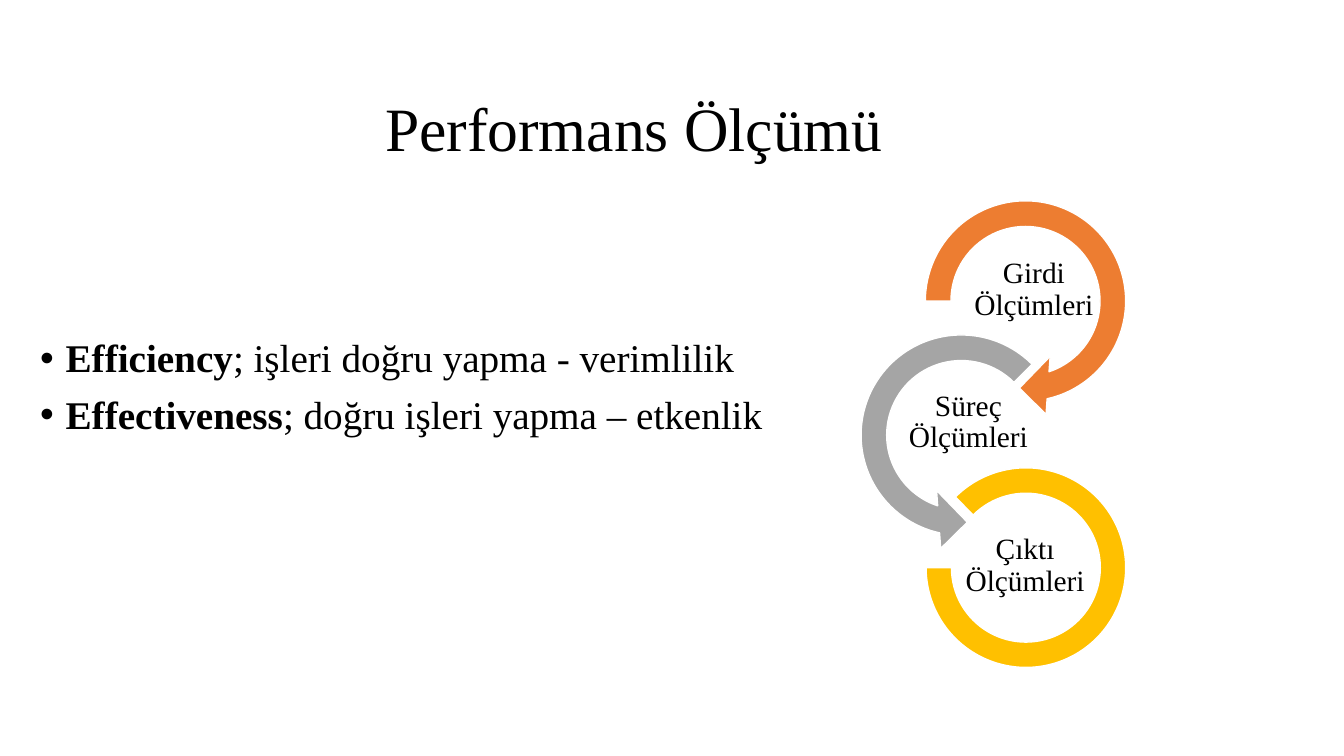
"""Build the performance measurement slide with its chain of three measurement stages."""
from dataclasses import dataclass
from typing import Any

from pptx import Presentation
from pptx.dml.color import RGBColor
from pptx.enum.shapes import MSO_SHAPE
from pptx.enum.text import MSO_ANCHOR, MSO_AUTO_SIZE, PP_ALIGN
from pptx.util import Cm, Pt

CLOCKWISE = MSO_SHAPE.CIRCULAR_ARROW
COUNTERCLOCKWISE = MSO_SHAPE.LEFT_CIRCULAR_ARROW
ARC = MSO_SHAPE.BLOCK_ARC
MIDDLE, TOP = MSO_ANCHOR.MIDDLE, MSO_ANCHOR.TOP
NO_FIT = MSO_AUTO_SIZE.NONE
LEFT, CENTER = PP_ALIGN.LEFT, PP_ALIGN.CENTER

FONT = "Times New Roman"
BLACK, WHITE = "000000", "FFFFFF"
LABEL_WIDTH, LABEL_HEIGHT = 3.25, 1.63
INSET = Cm(0.03)

TITLE_FRAME = {"word_wrap": True, "auto_size": NO_FIT, "vertical_anchor": MIDDLE}
BODY_FRAME = TITLE_FRAME | {"vertical_anchor": TOP}
LABEL_FRAME = TITLE_FRAME | {
    "margin_left": INSET, "margin_right": INSET,
    "margin_top": INSET, "margin_bottom": INSET,
}
TITLE_PARAGRAPH = {"alignment": LEFT, "line_spacing": 0.9}
BODY_PARAGRAPH = TITLE_PARAGRAPH | {"space_before": Pt(10)}
LABEL_PARAGRAPH = {"alignment": CENTER, "line_spacing": 0.9, "space_after": Pt(7.35)}


@dataclass(frozen=True)
class Stage:
    """A measurement stage: its ring and the label inside it."""

    label: str
    ring: MSO_SHAPE
    color: str
    left: float
    top: float
    size: float
    label_left: float
    label_top: float
    adjustments: tuple[float, ...]


@dataclass(frozen=True)
class Definition:
    """A term and its explanation."""

    term: str
    meaning: str


STAGES = (
    Stage("Girdi Ölçümleri", CLOCKWISE, "ED7D31", 22.91, 4.65, 5.87,
          24.43, 6.5, (0.11, 11.42, 45, 108, 0.125)),
    Stage("Süreç Ölçümleri", COUNTERCLOCKWISE, "A5A5A5", 21.29, 8.03, 5.87,
          22.78, 9.83, (0.11, 11.42, 63, 189, 0.125)),
    Stage("Çıktı Ölçümleri", ARC, "FFC000", 23.34, 11.79, 5.03,
          24.21, 13.44, (135, 108, 0.127)),
)
DEFINITIONS = (
    Definition("Efficiency", "; işleri doğru yapma - verimlilik"),
    Definition("Effectiveness", "; doğru işleri yapma – etkenlik"),
)


def color(hex_value: str) -> RGBColor:
    """Turn a hex string into a colour."""
    return RGBColor.from_string(hex_value)


def apply_format(target: Any, values: dict[str, Any]) -> None:
    """Set every named format value on the target."""
    for name, value in values.items():
        setattr(target, name, value)


def place(target: Any, left: float, top: float, width: float, height: float) -> None:
    """Move and size a placeholder, in centimetres."""
    apply_format(target, {"left": Cm(left), "top": Cm(top),
                          "width": Cm(width), "height": Cm(height)})


def write(paragraph: Any, text: str, size: float, bold: bool = False) -> None:
    """Append a formatted run to a paragraph."""
    run = paragraph.add_run()
    run.text = text
    apply_format(run.font, {"name": FONT, "size": Pt(size), "bold": bold})
    run.font.color.rgb = color(BLACK)


def fill_title(title: Any) -> None:
    """Place and write the title."""
    place(title, 9.45, 1.98, 13.34, 2.69)
    apply_format(title.text_frame, TITLE_FRAME)
    heading = title.text_frame.paragraphs[0]
    apply_format(heading, TITLE_PARAGRAPH)
    write(heading, "Performans Ölçümü", 44)


def fill_definitions(body: Any) -> None:
    """Place the body and write one bullet per definition."""
    place(body, 0.76, 8.41, 19, 4.45)
    frame = body.text_frame
    apply_format(frame, BODY_FRAME)
    for index, definition in enumerate(DEFINITIONS):
        bullet = frame.add_paragraph() if index else frame.paragraphs[0]
        apply_format(bullet, BODY_PARAGRAPH)
        properties = bullet._p.get_or_add_pPr()
        properties.set("marL", str(Cm(0.64)))
        properties.set("indent", str(-Cm(0.64)))
        write(bullet, definition.term, 28, bold=True)
        write(bullet, definition.meaning, 28)


def draw_stage(shapes: Any, stage: Stage) -> None:
    """Draw the ring of a stage and its label."""
    ring = shapes.add_shape(stage.ring, Cm(stage.left), Cm(stage.top),
                            Cm(stage.size), Cm(stage.size))
    for index, value in enumerate(stage.adjustments):
        ring.adjustments[index] = value
    ring.shadow.inherit = False
    ring.fill.solid()
    ring.fill.fore_color.rgb = color(stage.color)
    ring.line.color.rgb = color(WHITE)
    ring.line.width = Pt(1)

    label = shapes.add_textbox(Cm(stage.label_left), Cm(stage.label_top),
                               Cm(LABEL_WIDTH), Cm(LABEL_HEIGHT))
    apply_format(label.text_frame, LABEL_FRAME)
    caption = label.text_frame.paragraphs[0]
    apply_format(caption, LABEL_PARAGRAPH)
    write(caption, stage.label, 21)


def main() -> None:
    """Build and save the slide."""
    presentation = Presentation()
    presentation.slide_width, presentation.slide_height = Cm(33.87), Cm(19.05)
    slide = presentation.slides.add_slide(presentation.slide_layouts[1])
    fill_title(slide.shapes.title)
    fill_definitions(slide.placeholders[1])
    stage_chain = slide.shapes.add_group_shape()
    for stage in STAGES:
        draw_stage(stage_chain.shapes, stage)
    presentation.save("out.pptx")


if __name__ == "__main__":
    main()
